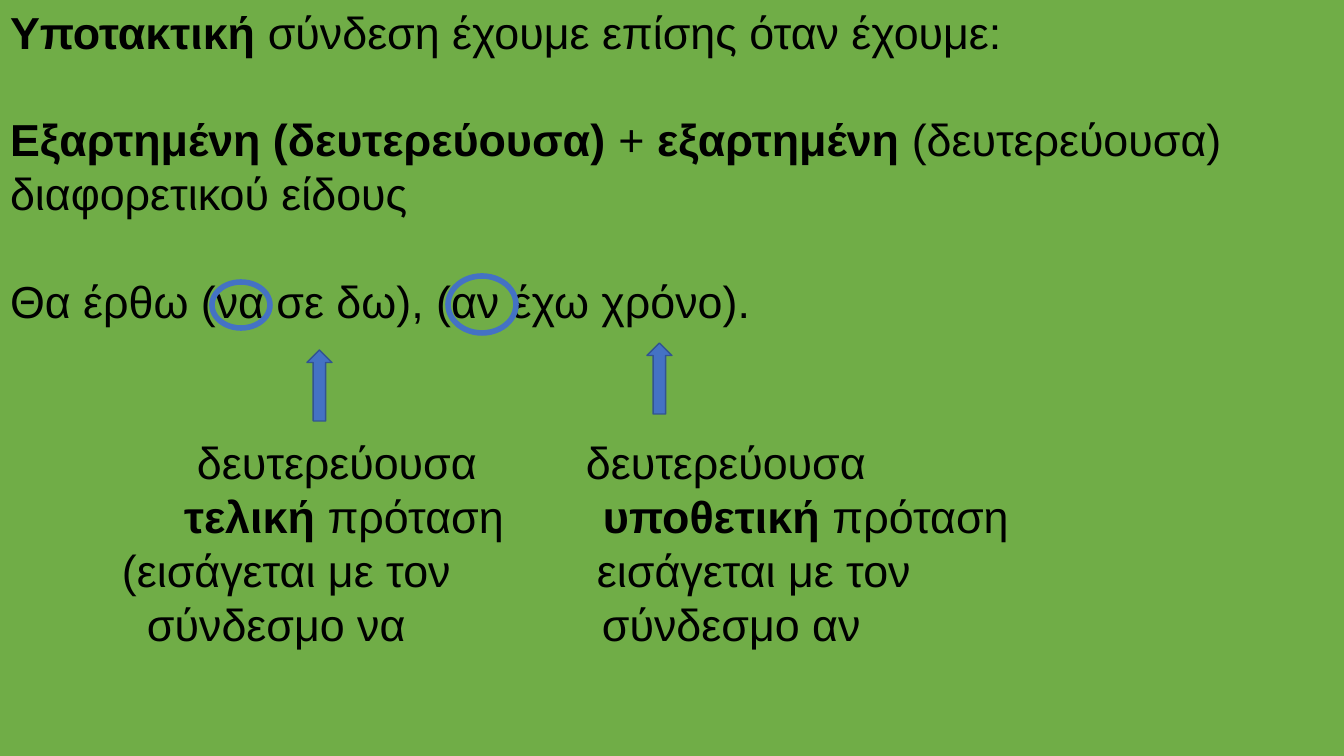
import dataclasses

import pptx
import pptx.dml.color
import pptx.enum.shapes
import pptx.enum.text
import pptx.oxml.ns
import pptx.util
from lxml import etree

EMU_PER_PX = 914400 / 100.8


@dataclasses.dataclass(frozen=True)
class Theme:
    """Colours and type sizes of the slide."""
    background: str = "70AD47"
    text: str = "000000"
    accent: str = "4472C4"
    accent_edge: str = "325491"
    font: str = "Arial"
    text_size: float = 32
    line_pitch: float = 38.4
    arrow_line: float = 1
    ring_line: float = 4


THEME = Theme()

HEADING = [("Υποτακτική", True), (" σύνδεση έχουμε επίσης όταν έχουμε:", False)]
RULE = [("Εξαρτημένη (δευτερεύουσα)", True), (" + ", False), ("εξαρτημένη", True),
        (" (δευτερεύουσα) διαφορετικού είδους", False)]
EXAMPLE = [("Θα έρθω (να σε δω), (αν έχω χρόνο).", False)]
PURPOSE_CLAUSE = [
    (187, [("δευτερεύουσα", False)]),
    (174, [("τελική", True), (" πρόταση", False)]),
    (112, [("(εισάγεται με τον", False)]),
    (137, [("σύνδεσμο να", False)]),
]
CONDITION_CLAUSE = [
    (0, [("δευτερεύουσα", False)]),
    (17, [("υποθετική", True), (" πρόταση", False)]),
    (11, [("εισάγεται με τον", False)]),
    (16, [("σύνδεσμο αν", False)]),
]
ARROW_BOXES = [(307, 350, 25, 71), (647, 343, 25, 71)]
RING_BOXES = [(212, 282, 58, 46), (448, 276, 68, 57)]


def px(length):
    """Turn pixels into EMU."""
    return pptx.util.Emu(round(length * EMU_PER_PX))


def color(value):
    """Return an RGB colour from its hex digits."""
    return pptx.dml.color.RGBColor.from_string(value)


def apply_format(target, values):
    """Set every attribute named in a dict."""
    for name, value in values.items():
        setattr(target, name, value)


def prepare_text(shape, box):
    """Place a text shape and return its text frame."""
    apply_format(shape, dict(zip(("left", "top", "width", "height"), map(px, box))))
    frame = shape.text_frame
    apply_format(frame, {
        "word_wrap": True,
        "auto_size": pptx.enum.text.MSO_AUTO_SIZE.NONE,
        "vertical_anchor": pptx.enum.text.MSO_ANCHOR.TOP,
        "margin_left": px(10), "margin_right": px(10),
        "margin_top": px(5), "margin_bottom": px(5),
    })
    return frame


def write_paragraph(paragraph, runs, lines_before=0, indent=0):
    """Fill a paragraph with runs, spacing and a left indent."""
    apply_format(paragraph, {
        "alignment": pptx.enum.text.PP_ALIGN.LEFT,
        "line_spacing": pptx.util.Pt(THEME.line_pitch),
        "space_before": pptx.util.Pt(lines_before * THEME.line_pitch),
        "space_after": pptx.util.Pt(0),
    })
    properties = paragraph._p.get_or_add_pPr()
    properties.set("marL", str(px(indent)))
    properties.set("indent", "0")
    etree.SubElement(properties, pptx.oxml.ns.qn("a:buNone"))
    for text, bold in runs:
        run = paragraph.add_run()
        run.text = text
        apply_format(run.font, {"name": THEME.font, "bold": bold,
                                "size": pptx.util.Pt(THEME.text_size)})
        run.font.color.rgb = color(THEME.text)


def add_panel(slide, box):
    """Lay the green panel behind everything else."""
    panel = slide.shapes.add_shape(pptx.enum.shapes.MSO_SHAPE.RECTANGLE, *map(px, box))
    panel.shadow.inherit = False
    panel.fill.solid()
    panel.fill.fore_color.rgb = color(THEME.background)
    panel.line.fill.background()
    slide.shapes._spTree.insert(2, panel._element)


def add_heading(slide, box):
    """Write the opening line in the title placeholder."""
    frame = prepare_text(slide.shapes.title, box)
    write_paragraph(frame.paragraphs[0], HEADING)


def add_explanation(slide, box):
    """Write the rule and the example in the body placeholder."""
    frame = prepare_text(slide.placeholders[1], box)
    write_paragraph(frame.paragraphs[0], RULE)
    write_paragraph(frame.add_paragraph(), EXAMPLE, lines_before=1)


def add_clause(slide, box, lines):
    """Write one clause description, each line with its own indent."""
    frame = prepare_text(slide.shapes.add_textbox(*map(px, box)), box)
    for index, (indent, runs) in enumerate(lines):
        paragraph = frame.add_paragraph() if index else frame.paragraphs[0]
        write_paragraph(paragraph, runs, indent=indent)


def add_marker(slide, kind, box, line_color, line_width, fill=None):
    """Add an arrow or a ring on the example sentence."""
    marker = slide.shapes.add_shape(kind, *map(px, box))
    marker.shadow.inherit = False
    if fill:
        marker.fill.solid()
        marker.fill.fore_color.rgb = color(fill)
    else:
        marker.fill.background()
    marker.line.color.rgb = color(line_color)
    marker.line.width = pptx.util.Pt(line_width)


def main():
    """Build the slide and save it."""
    presentation = pptx.Presentation()
    apply_format(presentation, {"slide_width": px(1344), "slide_height": px(756)})
    slide = presentation.slides.add_slide(presentation.slide_layouts[1])
    add_panel(slide, (0, 0, 1344, 933))
    add_heading(slide, (0, 0, 1344, 64))
    add_explanation(slide, (0, 107, 1344, 230))
    add_clause(slide, (0, 430, 560, 226), PURPOSE_CLAUSE)
    add_clause(slide, (576, 430, 500, 226), CONDITION_CLAUSE)
    shapes = pptx.enum.shapes.MSO_SHAPE
    for box in ARROW_BOXES:
        add_marker(slide, shapes.UP_ARROW, box, THEME.accent_edge, THEME.arrow_line, THEME.accent)
    for box in RING_BOXES:
        add_marker(slide, shapes.OVAL, box, THEME.accent, THEME.ring_line)
    presentation.save("out.pptx")


if __name__ == "__main__":
    main()
